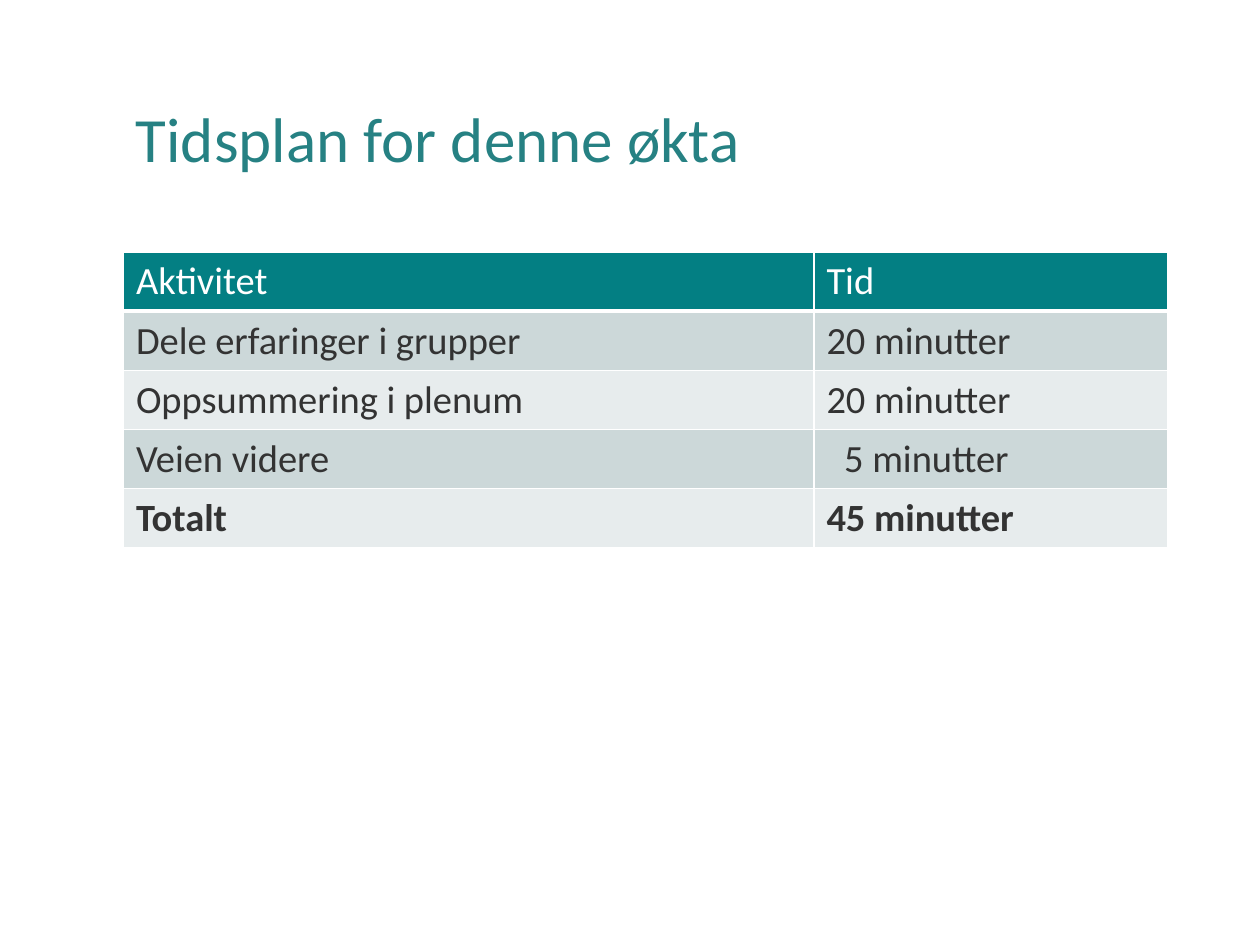
from lxml import etree
from pptx import Presentation
from pptx.dml.color import RGBColor
from pptx.enum.text import MSO_ANCHOR as Anchor
from pptx.oxml.ns import qn
from pptx.util import Inches, Pt

FONT = "Calibri"
WHITE, TITLE_TEAL, HEADER_TEAL = "FFFFFF", "268183", "037F83"
BODY_TEXT, BANDS = "333333", ("CCD8D9", "E7ECED")
CELL_MARGIN, DIGIT_INDENT = 0.1, 0.14

SCHEDULE = [
    ("Aktivitet", "Tid"),
    ("Dele erfaringer i grupper", "20 minutter"),
    ("Oppsummering i plenum", "20 minutter"),
    ("Veien videre", "5 minutter"),
    ("Totalt", "45 minutter"),
]


def color(hex_value):
    return RGBColor.from_string(hex_value)


def write(frame, text, size=22, fill=BODY_TEXT, bold=False, line_spacing=None):
    paragraph = frame.paragraphs[0]
    paragraph.line_spacing = line_spacing
    run = paragraph.add_run()
    run.text = text
    run.font.name = FONT
    run.font.size = Pt(size)
    run.font.bold = bold
    run.font.color.rgb = color(fill)


def add_borders(cell, **widths):
    """Draw white borders; must run before the cell fill is set."""
    properties = cell._tc.get_or_add_tcPr()
    for side in "LRTB":
        line = etree.SubElement(properties, qn(f"a:ln{side}"),
                                w=str(Pt(widths.get(side, 1))))
        solid = etree.SubElement(line, qn("a:solidFill"))
        etree.SubElement(solid, qn("a:srgbClr"), val=WHITE)


def add_title(slide, left, top, width, height):
    box = slide.shapes.add_textbox(Inches(left), Inches(top),
                                   Inches(width), Inches(height))
    frame = box.text_frame
    frame.word_wrap = True
    frame.vertical_anchor = Anchor.MIDDLE
    write(frame, "Tidsplan for denne økta", size=36, fill=TITLE_TEAL,
          line_spacing=0.9)


def add_schedule(slide, left, top, width, height):
    table = slide.shapes.add_table(len(SCHEDULE), 2, Inches(left), Inches(top),
                                   Inches(width), Inches(height)).table
    time_width = 2.81
    table.columns[0].width = Inches(width - time_width)
    table.columns[1].width = Inches(time_width)
    last = len(SCHEDULE) - 1
    for row, entries in enumerate(SCHEDULE):
        header = row == 0
        for column, text in enumerate(entries):
            cell = table.cell(row, column)
            add_borders(cell, T=3 if row == 1 else 1, B=3 if header else 1)
            cell.fill.solid()
            cell.fill.fore_color.rgb = color(
                HEADER_TEAL if header else BANDS[(row - 1) % 2])
            # A single-digit time lines up with the two-digit ones.
            single_digit = text[0].isdigit() and not text[1].isdigit()
            cell.margin_left = Inches(
                CELL_MARGIN + (DIGIT_INDENT if single_digit else 0))
            write(cell.text_frame, text, fill=WHITE if header else BODY_TEXT,
                  bold=row == last)


def main():
    deck = Presentation()
    deck.slide_width, deck.slide_height = Inches(10), Inches(7.5)
    slide = deck.slides.add_slide(deck.slide_layouts[6])
    left, width = 0.98, 8.29
    add_title(slide, left, 0.4, width, 1.45)
    add_schedule(slide, left, 2, width, 2.35)
    deck.save("out.pptx")


if __name__ == "__main__":
    main()
